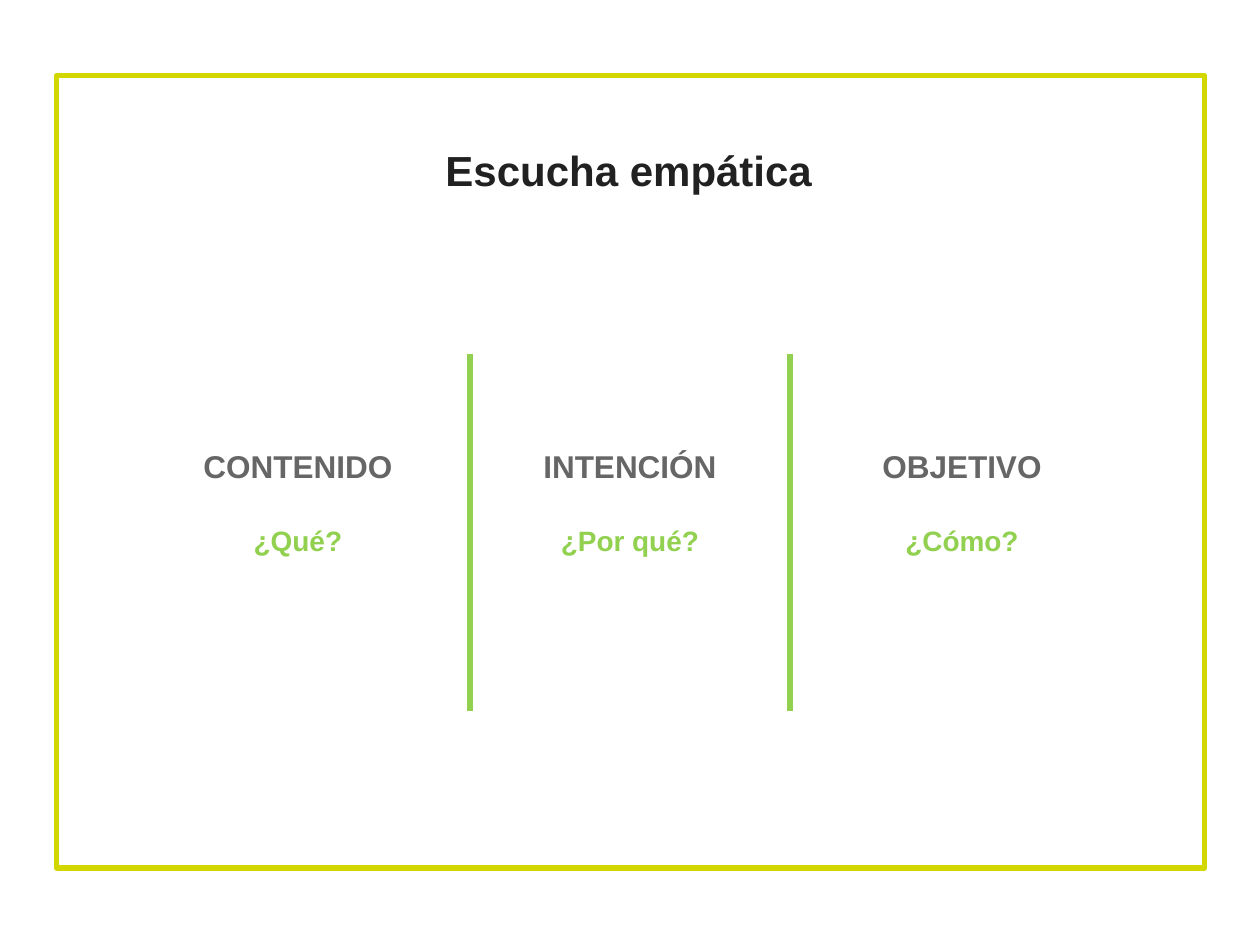
from lxml import etree
from pptx import Presentation
from pptx import util as u
from pptx.dml.color import RGBColor
from pptx.enum import shapes, text
from pptx.oxml.ns import qn

WIDTH, HEIGHT = 10, 7.5
CENTER = WIDTH / 2
COLUMN_PITCH = 2.635
COLUMN_WIDTH = 2.31
DIVIDER_OFFSET = 1.27
INSET = 0.1
QUESTION_DROP = 0.26
GREEN = "92D050"
COLUMNS = [
    ("CONTENIDO", "¿Qué?"),
    ("INTENCIÓN", "¿Por qué?"),
    ("OBJETIVO", "¿Cómo?"),
]


def color(value):
    return RGBColor.from_string(value)


def style_line(line, value):
    line.color.rgb = color(value)
    line.width = u.Pt(3)


def add_frame(slide, left, top, width, height):
    frame = slide.shapes.add_shape(
        shapes.MSO_SHAPE.RECTANGLE, *map(u.Inches, (left, top, width, height)))
    frame.shadow.inherit = False
    frame.fill.background()
    style_line(frame.line, "D2D700")


def add_label(slide, wording, box, size, value,
              anchor=text.MSO_ANCHOR.TOP, drop=0):
    body = slide.shapes.add_textbox(*map(u.Inches, box)).text_frame
    body.word_wrap = True
    body.vertical_anchor = anchor
    body.margin_left = body.margin_right = body.margin_bottom = u.Inches(INSET)
    body.margin_top = u.Inches(INSET + drop)
    line = body.paragraphs[0]
    line.text = wording
    line.alignment = text.PP_ALIGN.CENTER
    line.font.name = "Arial"
    line.font.size = u.Pt(size)
    line.font.bold = True
    line.font.color.rgb = color(value)


def add_column(slide, index, heading, question):
    left = CENTER + (index - 1) * COLUMN_PITCH - COLUMN_WIDTH / 2
    add_label(slide, heading, (left, 3.01, COLUMN_WIDTH, 0.94), 18, "666666",
              anchor=text.MSO_ANCHOR.BOTTOM)
    add_label(slide, question, (left, 3.89, COLUMN_WIDTH, 2.26), 16, GREEN,
              drop=QUESTION_DROP)


def add_divider(slide, x):
    divider = slide.shapes.add_connector(
        shapes.MSO_CONNECTOR.STRAIGHT, *map(u.Inches, (x, 2.81, x, 5.64)))
    style_line(divider.line, GREEN)
    etree.SubElement(divider._element.spPr, qn("a:effectLst"))


def main():
    deck = Presentation()
    deck.slide_width, deck.slide_height = u.Inches(WIDTH), u.Inches(HEIGHT)
    slide = deck.slides.add_slide(deck.slide_layouts[6])
    add_frame(slide, 0.45, 0.6, 9.11, 6.29)
    add_label(slide, "Escucha empática", (-0.01, 1.05, WIDTH, 0.7), 24, "212121")
    for index, (heading, question) in enumerate(COLUMNS):
        add_column(slide, index, heading, question)
    for side in (-1, 1):
        add_divider(slide, CENTER + side * DIVIDER_OFFSET)
    deck.save("out.pptx")


if __name__ == "__main__":
    main()
